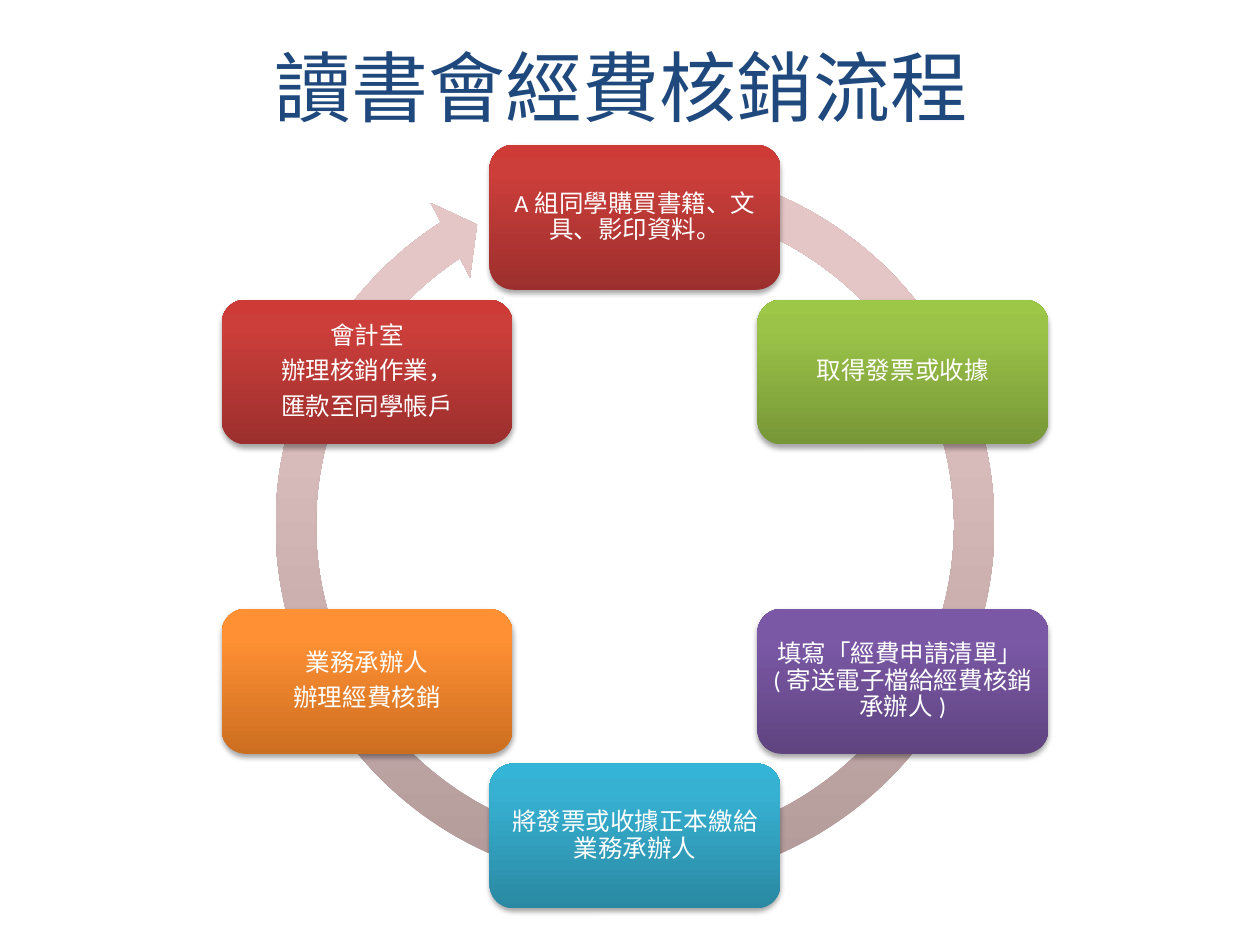
from copy import deepcopy
from math import cos, radians, sin

from lxml.etree import SubElement
from pptx import Presentation
from pptx.dml.color import RGBColor
from pptx.enum.shapes import MSO_SHAPE as Preset
from pptx.enum.text import MSO_ANCHOR as Anchor, PP_ALIGN as Align
from pptx.oxml.ns import qn
from pptx.util import Inches, Pt

WIDTH, HEIGHT = 10, 7.5
NAVY = RGBColor(0x1F, 0x49, 0x7D)
WHITE = RGBColor(0xFF, 0xFF, 0xFF)
BLACK = RGBColor(0x00, 0x00, 0x00)
ROSE = RGBColor(0xB0, 0x99, 0x98), RGBColor(0xE5, 0xC6, 0xC6), RGBColor(0xE6, 0xC7, 0xC6)
RED = RGBColor(0x9C, 0x2F, 0x2D), RGBColor(0xCB, 0x3E, 0x3A), RGBColor(0xCE, 0x3B, 0x37)
GREEN = RGBColor(0x77, 0x97, 0x37), RGBColor(0x9B, 0xC3, 0x48), RGBColor(0x9D, 0xC7, 0x46)
PURPLE = RGBColor(0x5F, 0x44, 0x80), RGBColor(0x7B, 0x58, 0xA6), RGBColor(0x7C, 0x57, 0xA8)
TEAL = RGBColor(0x2A, 0x88, 0xA2), RGBColor(0x37, 0xB1, 0xD2), RGBColor(0x34, 0xB4, 0xD6)
ORANGE = RGBColor(0xCC, 0x6E, 0x20), RGBColor(0xFF, 0x90, 0x34), RGBColor(0xFF, 0x91, 0x36)

STEPS = [
    (["A組同學購買書籍、文具、影印資料。"], RED),
    (["取得發票或收據"], GREEN),
    (["填寫「經費申請清單」(寄送電子檔給經費核銷承辦人)"], PURPLE),
    (["將發票或收據正本繳給業務承辦人"], TEAL),
    (["業務承辦人", "辦理經費核銷"], ORANGE),
    (["會計室", "辦理核銷作業，", "匯款至同學帳戶"], RED),
]


class CycleSlide:
    title_font, step_font = "Noto Sans CJK SC", "Calibri"
    title_size, step_size = 44, 14
    centre_x, centre_y = 5.04 / WIDTH, 4.18 / HEIGHT
    radius = 2.455
    step_width, step_height = 2.31 / WIDTH, 1.15 / HEIGHT
    ring_size = 6.05
    ring_adjustments = 0.053, 3.126, 142.221, 171.305, 0.055

    def __init__(self, deck):
        self.shapes = deck.slides.add_slide(deck.slide_layouts[6]).shapes

    def box(self, x, y, width, height):
        return [Inches(share * side) for share, side in
                ((x, WIDTH), (y, HEIGHT), (width, WIDTH), (height, HEIGHT))]

    def centred_box(self, x, y, width, height):
        return self.box(x - width / 2, y - height / 2, width, height)

    def set_text(self, shape, lines, font, size, color):
        frame = shape.text_frame
        frame.word_wrap = True
        frame.vertical_anchor = Anchor.MIDDLE
        frame.text = "\n".join(lines)
        for paragraph in frame.paragraphs:
            paragraph.alignment = Align.CENTER
            paragraph.font.name = font
            paragraph.font.size = Pt(size)
            paragraph.font.color.rgb = color
        return frame

    def title(self, text):
        heading = self.shapes.add_textbox(*self.box(0.043, 0.017, 0.9, 0.147))
        self.set_text(heading, [text], self.title_font, self.title_size, NAVY)

    def gradient_shape(self, preset, box, colors):
        shape = self.shapes.add_shape(preset, *box)
        shape.shadow.inherit = False
        shape.line.fill.background()
        shape.fill.gradient()
        shape.fill.gradient_angle = 90
        stops = shape._element.spPr.find(qn("a:gradFill")).find(qn("a:gsLst"))
        stops.append(deepcopy(stops[-1]))
        for stop, position, color in zip(shape.fill.gradient_stops, (0, 0.8, 1), colors):
            stop.position = position
            stop.color.rgb = color
        return shape

    def drop_shadow(self, shape):
        effects = shape._element.spPr.find(qn("a:effectLst"))
        shadow = SubElement(effects, qn("a:outerShdw"), blurRad=str(Pt(3.1)),
                            dist=str(Pt(1.8)), dir="5400000", rotWithShape="0")
        color = SubElement(shadow, qn("a:srgbClr"), val=str(BLACK))
        SubElement(color, qn("a:alpha"), val="35000")

    def ring(self):
        box = self.centred_box(self.centre_x, self.centre_y - 0.002,
                               self.ring_size / WIDTH, self.ring_size / HEIGHT)
        arrow = self.gradient_shape(Preset.CIRCULAR_ARROW, box, ROSE)
        for index, value in enumerate(self.ring_adjustments):
            arrow.adjustments[index] = value

    def step(self, angle, lines, colors):
        x = self.centre_x + self.radius * sin(radians(angle)) / WIDTH
        y = self.centre_y - self.radius * cos(radians(angle)) / HEIGHT
        box = self.centred_box(x, y, self.step_width, self.step_height)
        card = self.gradient_shape(Preset.ROUNDED_RECTANGLE, box, colors)
        self.drop_shadow(card)
        frame = self.set_text(card, lines, self.step_font, self.step_size, WHITE)
        frame.margin_left = frame.margin_right = Inches(0.06)
        frame.margin_top = frame.margin_bottom = Inches(0.06)
        for paragraph in frame.paragraphs:
            paragraph.line_spacing = 0.9
            paragraph.space_after = Pt(0.35 * self.step_size)


def main():
    deck = Presentation()
    deck.slide_width, deck.slide_height = Inches(WIDTH), Inches(HEIGHT)
    slide = CycleSlide(deck)
    slide.title("讀書會經費核銷流程")
    slide.ring()
    for index, (lines, colors) in enumerate(STEPS):
        slide.step(index * 360 / len(STEPS), lines, colors)
    deck.save("out.pptx")


if __name__ == "__main__":
    main()
